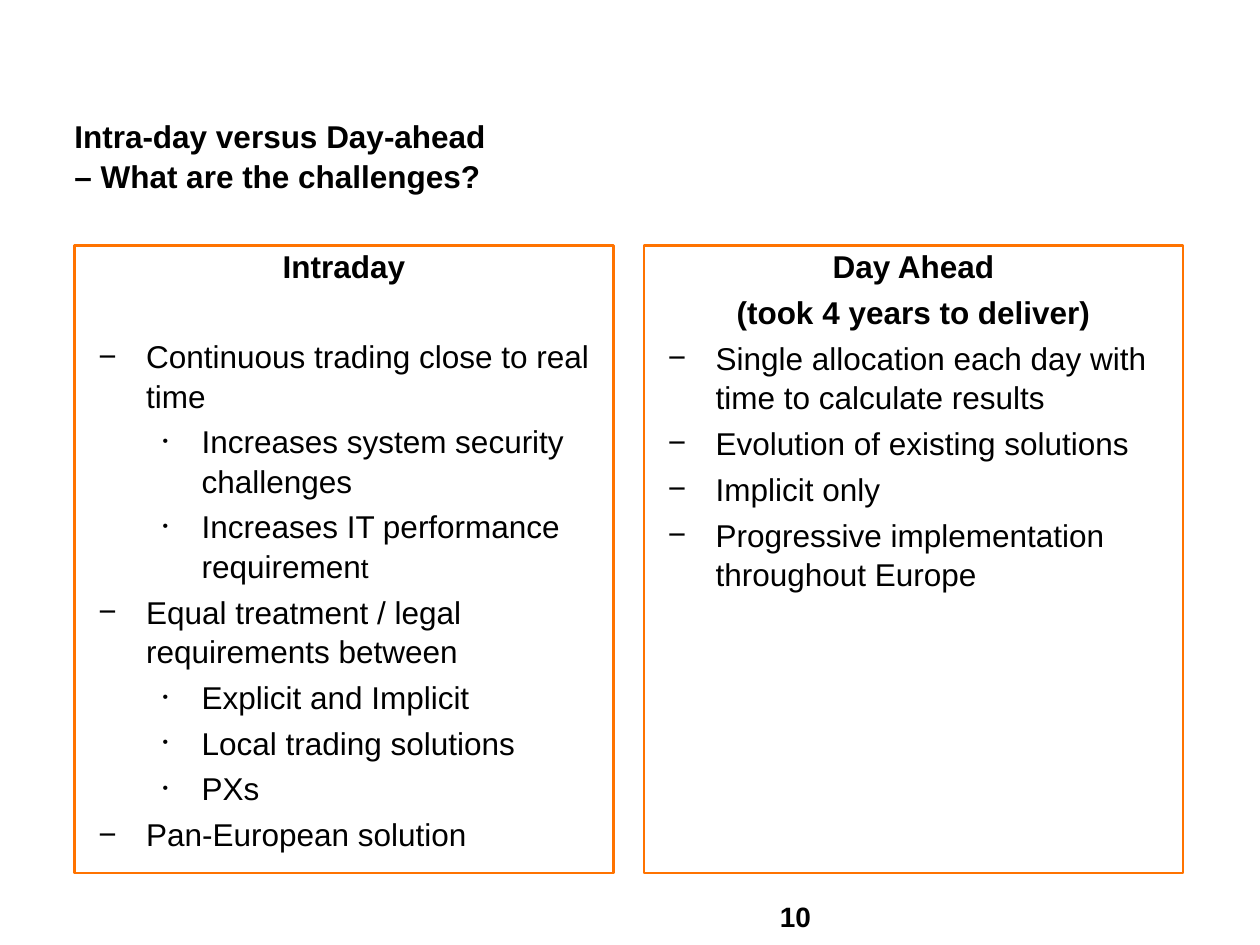
"""Build the slide comparing the intra-day and day-ahead challenges."""
from dataclasses import dataclass
from typing import Optional

from lxml.etree import SubElement
from pptx import Presentation
from pptx.dml.color import RGBColor
from pptx.enum.text import MSO_ANCHOR as Anchor, MSO_AUTO_SIZE as AutoSize, PP_ALIGN as Align
from pptx.oxml.ns import qn
from pptx.util import Inches, Pt

BLACK = RGBColor(0x00, 0x00, 0x00)
ORANGE = RGBColor(0xFF, 0x73, 0x00)
FONT = "Arial"
TEXT_SIZE = 18
PARAGRAPH_GAP = 3.75
EMPTY_LINE = 25.25
LINE_SPACING = 1.04
LEFT, COLUMN_TOP = 0.59, 1.95
COLUMN_WIDTH, COLUMN_HEIGHT, COLUMN_STEP = 4.28, 4.98, 4.52


@dataclass(frozen=True)
class Style:
    level: int
    margin: float
    indent: float
    bullet: Optional[str] = None
    bullet_percent: int = 100


@dataclass(frozen=True)
class Line:
    text: str
    style: Style
    gap: float = PARAGRAPH_GAP
    small_ending: str = ""


HEADING = Style(0, 0, 0)
POINT = Style(1, 0.57, -0.38, "−")
DETAIL = Style(2, 1.01, -0.31, "•", 50)

COLUMNS = [
    [
        Line("Intraday", HEADING),
        Line("Continuous trading close to real time", POINT, PARAGRAPH_GAP + EMPTY_LINE),
        Line("Increases system security challenges", DETAIL),
        Line("Increases IT performance requiremen", DETAIL, small_ending="t"),
        Line("Equal treatment / legal requirements between", POINT),
        Line("Explicit and Implicit", DETAIL),
        Line("Local trading solutions", DETAIL),
        Line("PXs", DETAIL),
        Line("Pan-European solution", POINT),
    ],
    [
        Line("Day Ahead", HEADING),
        Line("(took 4 years to deliver)", HEADING),
        Line("Single allocation each day with time to calculate results", POINT),
        Line("Evolution of existing solutions", POINT),
        Line("Implicit only", POINT),
        Line("Progressive implementation throughout Europe", POINT),
    ],
]


def place(shape, left: float, top: float, width: float, height: float) -> None:
    """Position a shape and give its text frame plain settings."""
    shape.left, shape.top = Inches(left), Inches(top)
    shape.width, shape.height = Inches(width), Inches(height)
    frame = shape.text_frame
    frame.margin_left = frame.margin_right = frame.margin_top = frame.margin_bottom = 0
    frame.vertical_anchor = Anchor.TOP
    frame.auto_size = AutoSize.NONE
    frame.word_wrap = True


def format_runs(paragraph, size: float, bold: bool) -> None:
    """Apply the slide's font to every run of a paragraph."""
    for run in paragraph.runs:
        run.font.name = FONT
        run.font.size = Pt(size)
        run.font.bold = bold
        run.font.color.rgb = BLACK


def set_bullet(paragraph, style: Style) -> None:
    """Set the indents and the bullet of a paragraph."""
    properties = paragraph._p.get_or_add_pPr()
    properties.set("marL", str(Inches(style.margin)))
    properties.set("indent", str(Inches(style.indent)))
    if style.bullet is None:
        SubElement(properties, qn("a:buNone"))
        return
    SubElement(properties, qn("a:buSzPct"), val=str(style.bullet_percent * 1000))
    SubElement(properties, qn("a:buFont"), typeface=FONT)
    SubElement(properties, qn("a:buChar"), char=style.bullet)


def fill_column(shape, lines: list[Line]) -> None:
    """Write the lines of one column into its framed placeholder."""
    shape.line.color.rgb = ORANGE
    shape.line.width = Pt(1.5)
    frame = shape.text_frame
    frame.text = "\n".join(line.text for line in lines)
    for index, (paragraph, line) in enumerate(zip(frame.paragraphs, lines)):
        is_heading = line.style is HEADING
        paragraph.level = line.style.level
        paragraph.alignment = Align.CENTER if is_heading else Align.LEFT
        paragraph.line_spacing = LINE_SPACING
        paragraph.space_before = Pt(line.gap if index else 0)
        set_bullet(paragraph, line.style)
        if line.small_ending:
            paragraph.add_run().text = line.small_ending
        format_runs(paragraph, TEXT_SIZE, is_heading)
        if line.small_ending:
            paragraph.runs[-1].font.size = Pt(16)


def main() -> None:
    """Create and save the presentation."""
    presentation = Presentation()
    presentation.slide_width, presentation.slide_height = Inches(10), Inches(7.5)
    slide = presentation.slides.add_slide(presentation.slide_layouts[3])
    title, *columns = slide.placeholders

    place(title, LEFT, 0.92, 8.8, 0.64)
    title.text_frame.text = "Intra-day versus Day-ahead\v– What are the challenges?"
    heading = title.text_frame.paragraphs[0]
    heading.alignment = Align.LEFT
    heading.line_spacing = LINE_SPACING
    format_runs(heading, TEXT_SIZE, True)

    for index, (column, lines) in enumerate(zip(columns, COLUMNS)):
        place(column, LEFT + index * COLUMN_STEP, COLUMN_TOP, COLUMN_WIDTH, COLUMN_HEIGHT)
        fill_column(column, lines)

    page_number = slide.shapes.add_textbox(0, 0, 0, 0)
    place(page_number, 6.19, 7.14, 0.62, 0.27)
    page_number.text_frame.text = "10"
    format_runs(page_number.text_frame.paragraphs[0], 16, True)

    presentation.save("out.pptx")


if __name__ == "__main__":
    main()
